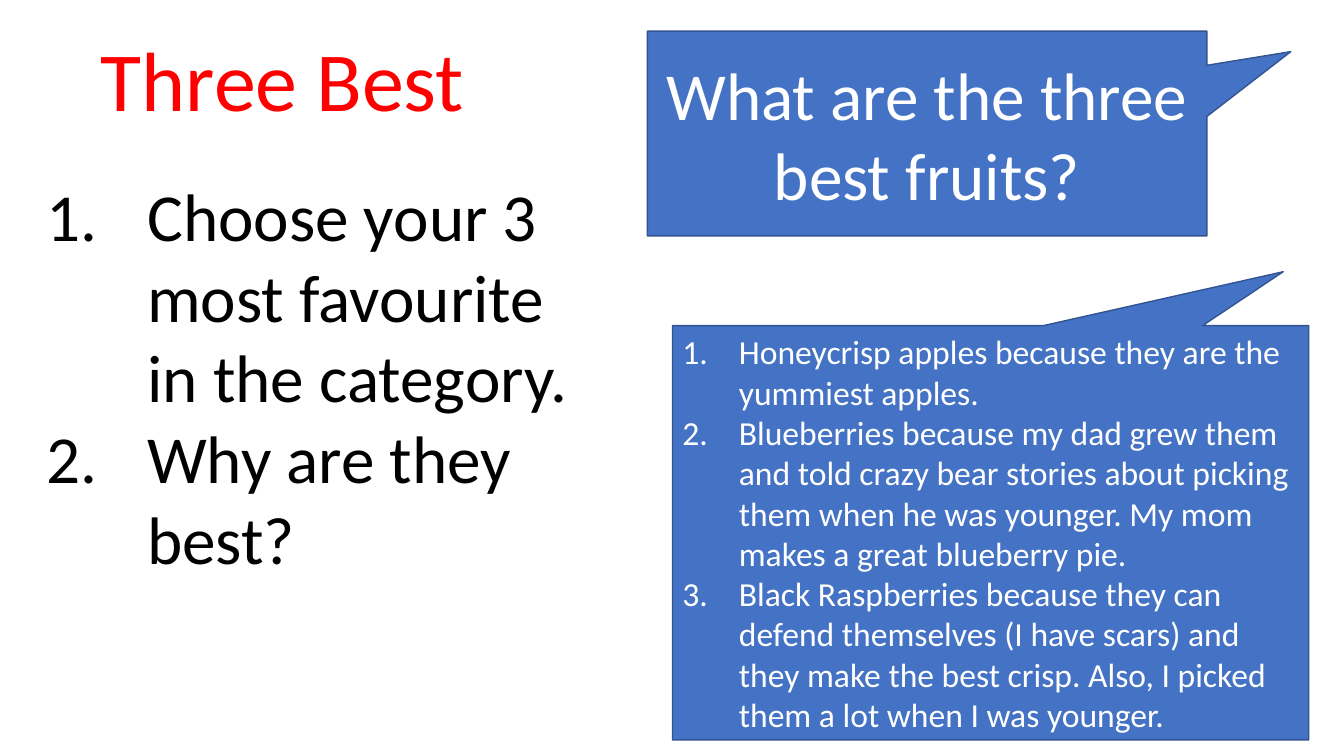
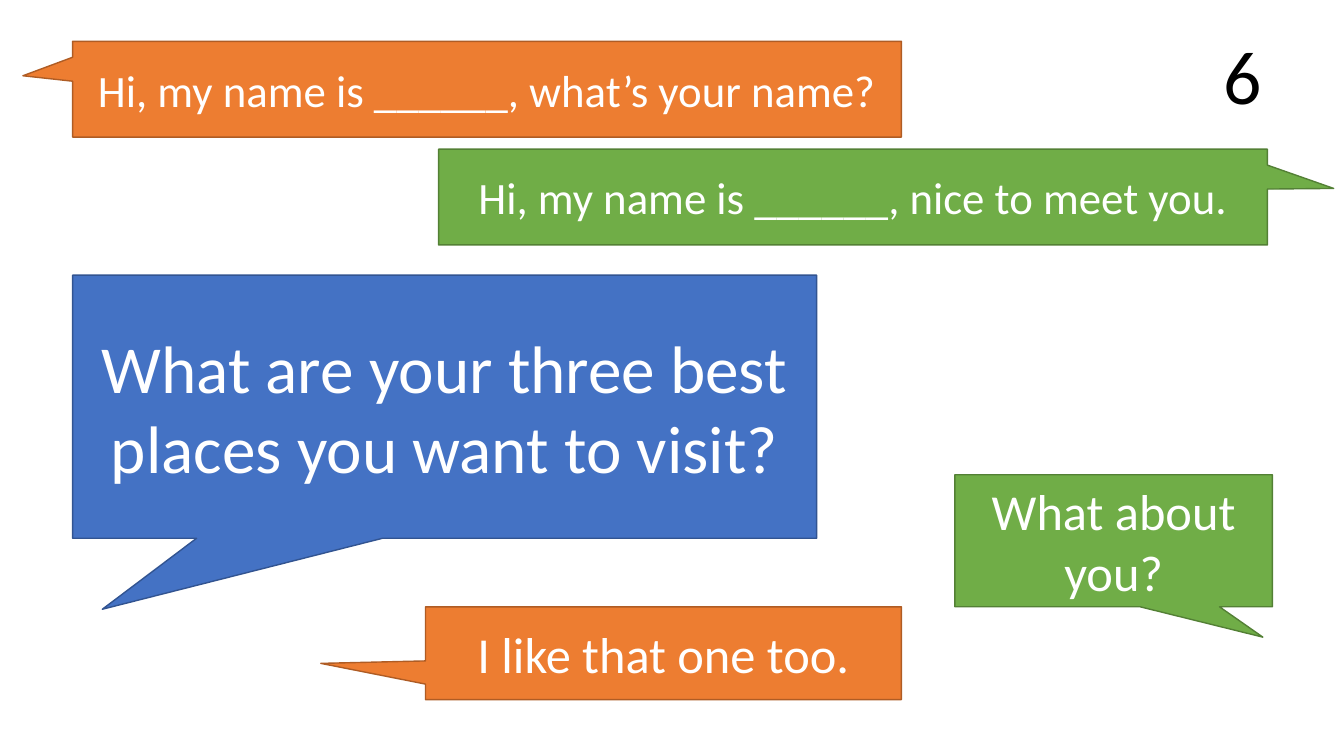
from lxml import etree
from pptx import Presentation
from pptx.dml.color import RGBColor
from pptx.enum.shapes import MSO_SHAPE
from pptx.enum.text import MSO_ANCHOR, MSO_AUTO_SIZE, PP_ALIGN
from pptx.oxml.ns import qn
from pptx.util import Inches, Pt

CALLOUT = MSO_SHAPE.RECTANGULAR_CALLOUT
TOP, MIDDLE = MSO_ANCHOR.TOP, MSO_ANCHOR.MIDDLE
LEFT, CENTER = PP_ALIGN.LEFT, PP_ALIGN.CENTER
NO_FIT = MSO_AUTO_SIZE.NONE
TITLE_AND_BODY, TITLE_ONLY = 1, 5

# Shared style
FONT = "Calibri"
BLACK = RGBColor(0x00, 0x00, 0x00)
WHITE = RGBColor(0xFF, 0xFF, 0xFF)
RED = RGBColor(0xFF, 0x00, 0x00)
BLUE = (RGBColor(0x44, 0x72, 0xC4), RGBColor(0x32, 0x54, 0x91))
ORANGE = (RGBColor(0xED, 0x7D, 0x31), RGBColor(0xAF, 0x5C, 0x24))
GREEN = (RGBColor(0x70, 0xAD, 0x47), RGBColor(0x53, 0x80, 0x35))

# Content: boxes are left, top, width, height in inches;
# a callout's tip is its offset from the centre, as shares of the box
SLIDES = [
    {
        "layout": TITLE_AND_BODY,
        "title": ("Three Best", (0.9, 0.22, 3.84, 1.11), 60, RED),
        "steps": (["Choose your 3 most favourite in the category.",
                   "Why are they best?"], (0.36, 1.68, 5.66, 4.14), 48, 1),
        "callouts": [
            (["What are the three best fruits?"],
             (6.42, 0.31, 5.55, 2.03), (0.65, -0.4), BLUE, 48, 0),
            (["Honeycrisp apples because they are the yummiest apples.",
              "Blueberries because my dad grew them and told crazy bear stories "
              "about picking them when he was younger. My mom makes a great "
              "blueberry pie.",
              "Black Raspberries because they can defend themselves (I have "
              "scars) and they make the best crisp. Also, I picked them a lot "
              "when I was younger."],
             (6.67, 3.23, 6.31, 4.11), (0.46, -0.63), BLUE, 24, 0.56),
        ],
    },
    {
        "layout": TITLE_ONLY,
        "title": ("6", (12.03, 0.24, 0.97, 1.01), 54, BLACK),
        "callouts": [
            (["What are your three best places you want to visit?"],
             (0.72, 2.73, 7.38, 2.61), (-0.46, 0.77), BLUE, 48, 0),
            (["Hi, my name is ______, what’s your name?"],
             (0.72, 0.41, 8.22, 0.95), (-0.56, -0.14), ORANGE, 32, 0),
            (["Hi, my name is ______, nice to meet you."],
             (4.35, 1.48, 8.22, 0.95), (0.58, -0.09), GREEN, 32, 0),
            (["I like that one too."],
             (4.22, 6.02, 4.72, 0.92), (-0.72, 0.11), ORANGE, 36, 0),
            (["What about you?"],
             (9.47, 4.71, 3.15, 1.31), (0.47, 0.73), GREEN, 36, 0),
        ],
    },
]


def number(paragraph, indent):
    """Number a paragraph 1., 2., ... with a hanging indent in inches."""
    props = paragraph._p.get_or_add_pPr()
    props.set("marL", str(Inches(indent)))
    props.set("indent", str(-Inches(indent)))
    etree.SubElement(props, qn("a:buAutoNum"), type="arabicPeriod")


def write(frame, lines, size, color, align=LEFT, anchor=TOP, indent=0):
    frame.word_wrap = True
    frame.auto_size = NO_FIT
    frame.vertical_anchor = anchor
    for i, line in enumerate(lines):
        paragraph = frame.add_paragraph() if i else frame.paragraphs[0]
        paragraph.alignment = align
        paragraph.space_before = Pt(0)
        if indent:
            number(paragraph, indent)
        run = paragraph.add_run()
        run.text = line
        run.font.name = FONT
        run.font.size = Pt(size)
        run.font.color.rgb = color


def place(shape, box):
    shape.left, shape.top, shape.width, shape.height = map(Inches, box)


def add_callout(slide, lines, box, tip, colors, size, indent):
    callout = slide.shapes.add_shape(CALLOUT, *map(Inches, box))
    callout.shadow.inherit = False
    callout.adjustments[0], callout.adjustments[1] = tip
    fill, outline = colors
    callout.fill.solid()
    callout.fill.fore_color.rgb = fill
    callout.line.color.rgb = outline
    callout.line.width = Pt(1)
    write(callout.text_frame, lines, size, WHITE,
          LEFT if indent else CENTER, MIDDLE, indent)


def build(deck, content):
    slide = deck.slides.add_slide(deck.slide_layouts[content["layout"]])
    # Title and numbered steps
    title, box, size, color = content["title"]
    place(slide.shapes.title, box)
    write(slide.shapes.title.text_frame, [title], size, color)
    if "steps" in content:
        steps, box, size, indent = content["steps"]
        body = slide.placeholders[1]
        place(body, box)
        write(body.text_frame, steps, size, BLACK, indent=indent)
    # Speech callouts
    for callout in content["callouts"]:
        add_callout(slide, *callout)


def main():
    deck = Presentation()
    deck.slide_width, deck.slide_height = Inches(13.33), Inches(7.5)
    for content in SLIDES:
        build(deck, content)
    deck.save("out.pptx")


if __name__ == "__main__":
    main()
